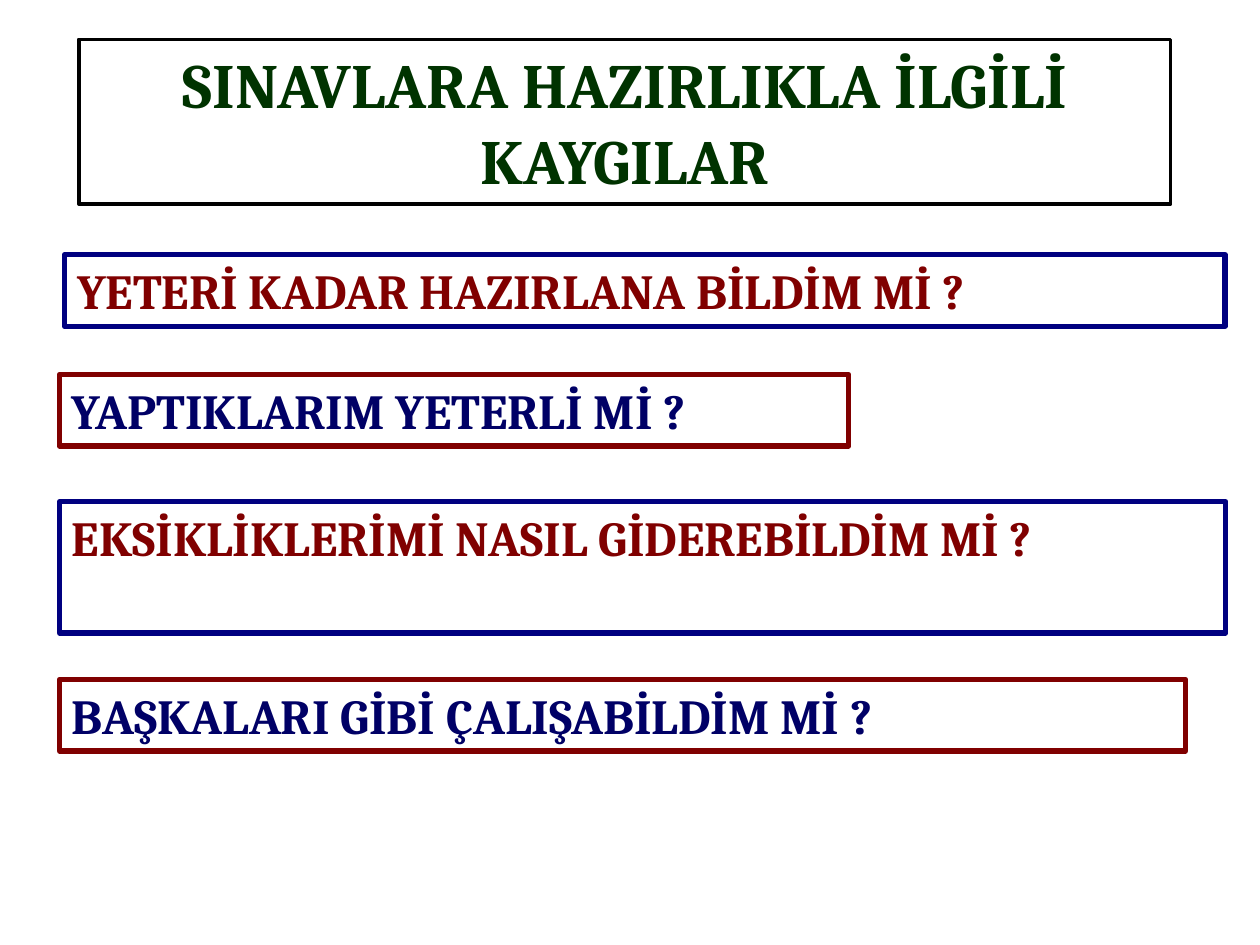
from pptx import Presentation
from pptx import util as u
from pptx.dml.color import RGBColor
from pptx.enum import text

NAVY, MAROON = "000080", "800000"


def color(hex_string):
    return RGBColor.from_string(hex_string)


def write(shape, wording, *, size, ink, align=text.PP_ALIGN.LEFT):
    frame = shape.text_frame
    frame.word_wrap = True
    frame.auto_size = text.MSO_AUTO_SIZE.SHAPE_TO_FIT_TEXT
    frame.vertical_anchor = text.MSO_ANCHOR.TOP
    paragraph = frame.paragraphs[0]
    paragraph.alignment = align
    paragraph.space_before = u.Pt(0)
    run = paragraph.add_run()
    run.text = wording
    run.font.name = "Cambria"
    run.font.size = u.Pt(size)
    run.font.bold = True
    run.font.color.rgb = color(ink)


class FramedSlide:
    """A slide whose texts stand in outlined boxes."""

    title_size = 36
    question_size = 28

    def __init__(self, presentation):
        self.slide = presentation.slides.add_slide(presentation.slide_layouts[5])

    def outline(self, shape, hex_string, width):
        shape.line.color.rgb = color(hex_string)
        shape.line.width = u.Pt(width)

    def title(self, wording, left, top, width, height):
        shape = self.slide.shapes.title
        shape.left, shape.top = u.Pt(left), u.Pt(top)
        shape.width, shape.height = u.Pt(width), u.Pt(height)
        shape.fill.solid()
        shape.fill.fore_color.rgb = color("FFFFFF")
        self.outline(shape, "000000", 2)
        write(shape, wording, size=self.title_size, ink="003300",
              align=text.PP_ALIGN.CENTER)

    def question(self, wording, left, top, width, height, border, ink):
        shape = self.slide.shapes.add_textbox(
            u.Pt(left), u.Pt(top), u.Pt(width), u.Pt(height))
        self.outline(shape, border, 3)
        write(shape, wording, size=self.question_size, ink=ink)


def main():
    presentation = Presentation()
    presentation.slide_width, presentation.slide_height = u.Pt(720), u.Pt(540)
    framed = FramedSlide(presentation)
    framed.title("SINAVLARA HAZIRLIKLA İLGİLİ KAYGILAR", 45, 22.5, 624, 94)

    questions = [
        ("YETERİ KADAR HAZIRLANA BİLDİM Mİ ?", 37, 145.5, 663, 41),
        ("YAPTIKLARIM YETERLİ Mİ ?", 34, 214, 451, 41),
        ("EKSİKLİKLERİMİ NASIL GİDEREBİLDİM Mİ ?", 34, 286.75, 666.5, 75),
        ("BAŞKALARI GİBİ ÇALIŞABİLDİM Mİ ?", 34, 388.25, 643.5, 41),
    ]
    schemes = [(NAVY, MAROON), (MAROON, "000066")]
    for index, question in enumerate(questions):
        border, ink = schemes[index % 2]
        framed.question(*question, border, ink)

    presentation.save("out.pptx")


if __name__ == "__main__":
    main()
